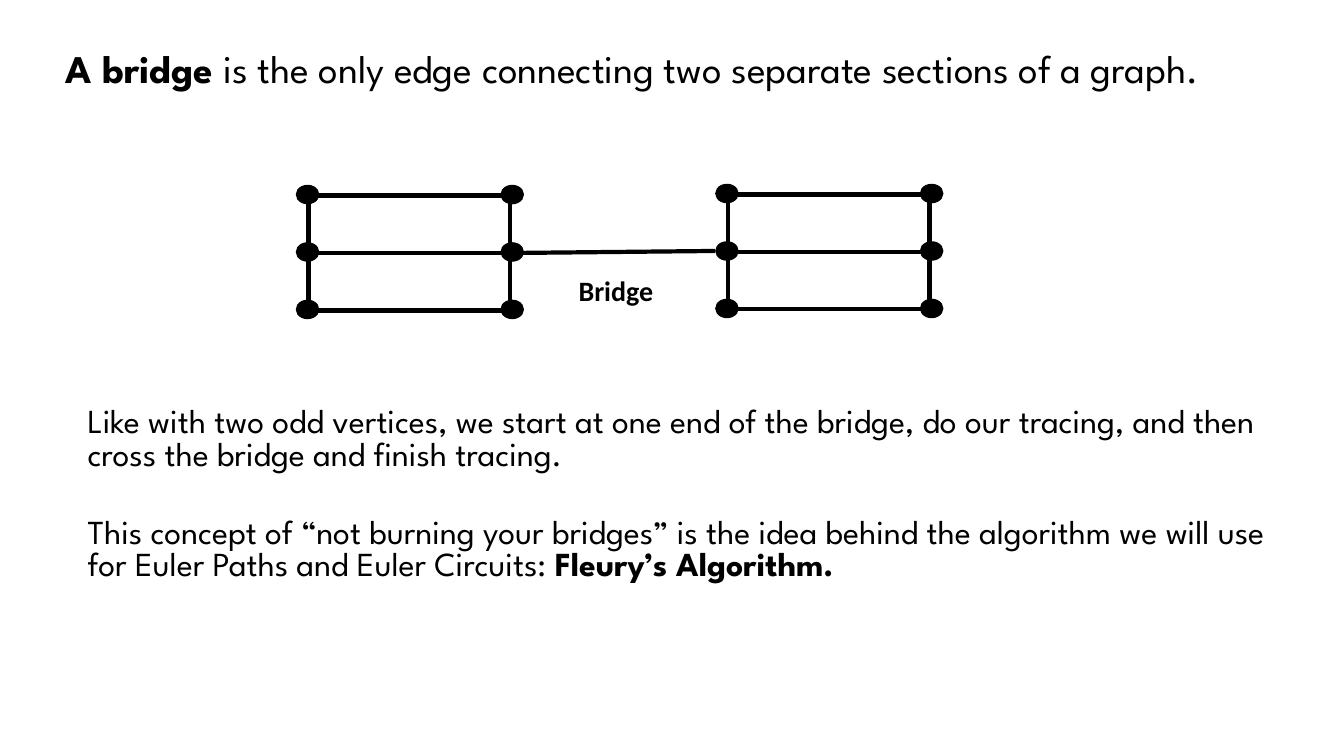
from dataclasses import dataclass
from itertools import product

from lxml.etree import SubElement
from pptx import Presentation
from pptx.dml.color import RGBColor
from pptx.enum.shapes import MSO_CONNECTOR, MSO_SHAPE
from pptx.enum.text import MSO_ANCHOR, MSO_AUTO_SIZE, PP_ALIGN
from pptx.oxml.ns import qn
from pptx.shapes.base import BaseShape
from pptx.slide import Slide
from pptx.util import Inches, Pt


@dataclass(frozen=True)
class Theme:
    ink: RGBColor = RGBColor(0, 0, 0)
    paper: RGBColor = RGBColor(255, 255, 255)
    text_font: str = "League Spartan"
    label_font: str = "Calibri"
    title_size: int = 28
    text_size: int = 24
    label_size: int = 20
    edge_width: float = 3
    vertex_width: float = 1


@dataclass(frozen=True)
class Span:
    text: str
    bold: bool = False


@dataclass(frozen=True)
class Paragraph:
    spans: tuple[Span, ...]
    space_before: float = 0
    line_spacing: float = 1.0


@dataclass(frozen=True)
class Box:
    left: float
    top: float
    width: float
    height: float


@dataclass(frozen=True)
class Section:
    """One side of the graph: a rectangle halved by a horizontal edge."""
    left: float
    top: float


THEME = Theme()
SECTION_WIDTH, ROW_HEIGHT = 2.0, 0.57
VERTEX_WIDTH, VERTEX_HEIGHT = 0.22, 0.18
COLUMN_OFFSETS = (-0.12, 1.91)
VERTEX_RISE = 0.1

SECTIONS = (Section(7.22, 1.93), Section(3.06, 1.94))
BRIDGE_START, BRIDGE_END = (5.08, 2.51), (7.09, 2.49)

TITLE_BOX = Box(0.55, 0.48, 12.25, 1)
LABEL_BOX = Box(5.64, 2.66, 1.24, 0.44)
TEXT_BOX = Box(0.77, 4, 12.2, 2.6)

TITLE = (
    Paragraph((
        Span("A bridge ", True),
        Span("is the only edge connecting two separate sections of a graph."),
    ), 10, 0.8),
)
LABEL = (Paragraph((Span("Bridge", True),)),)
EXPLANATION = (
    Paragraph((
        Span("Like with two odd vertices, we start at one end of the bridge, "
             "do our tracing, and then cross the bridge and finish tracing."),
    ), 5, 0.8),
    Paragraph((
        Span("This concept of “not burning your bridges” is the idea behind the "
             "algorithm we will use for Euler Paths and Euler Circuits: "),
        Span("Fleury’s Algorithm.", True),
    ), 33, 0.8),
)


def set_all(target: object, values: dict[str, object]) -> None:
    for name, value in values.items():
        setattr(target, name, value)


def place(shape: BaseShape, box: Box) -> None:
    set_all(shape, {
        "left": Inches(box.left), "top": Inches(box.top),
        "width": Inches(box.width), "height": Inches(box.height),
    })


def write(shape: BaseShape, paragraphs: tuple[Paragraph, ...], font: str, size: int) -> None:
    frame = shape.text_frame
    set_all(frame, {
        "word_wrap": True, "auto_size": MSO_AUTO_SIZE.NONE,
        "vertical_anchor": MSO_ANCHOR.TOP,
    })
    for index, content in enumerate(paragraphs):
        para = frame.add_paragraph() if index else frame.paragraphs[0]
        set_all(para, {
            "alignment": PP_ALIGN.LEFT, "line_spacing": content.line_spacing,
            "space_before": Pt(content.space_before),
        })
        for span in content.spans:
            run = para.add_run()
            run.text = span.text
            set_all(run.font, {"name": font, "size": Pt(size), "bold": span.bold})
            run.font.color.rgb = THEME.ink


def add_text(slide: Slide, box: Box, paragraphs: tuple[Paragraph, ...],
             font: str, size: int) -> None:
    shape = slide.shapes.add_textbox(0, 0, 0, 0)
    place(shape, box)
    write(shape, paragraphs, font, size)


def draw_edge(slide: Slide, start: tuple[float, float], end: tuple[float, float]) -> None:
    edge = slide.shapes.add_connector(
        MSO_CONNECTOR.STRAIGHT, *(Inches(value) for value in (*start, *end)))
    edge.line.color.rgb = THEME.ink
    edge.line.width = Pt(THEME.edge_width)
    SubElement(edge._element.spPr, qn("a:effectLst"))


def draw_outlined(slide: Slide, kind: MSO_SHAPE, box: Box, line_width: float) -> BaseShape:
    shape = slide.shapes.add_shape(kind, 0, 0, 0, 0)
    place(shape, box)
    shape.shadow.inherit = False
    shape.fill.background()
    shape.line.color.rgb = THEME.ink
    shape.line.width = Pt(line_width)
    return shape


def draw_section(slide: Slide, section: Section) -> None:
    outline = Box(section.left, section.top, SECTION_WIDTH, 2 * ROW_HEIGHT)
    draw_outlined(slide, MSO_SHAPE.RECTANGLE, outline, THEME.edge_width)
    middle = section.top + ROW_HEIGHT
    draw_edge(slide, (section.left, middle), (section.left + SECTION_WIDTH, middle))
    for offset, row in product(COLUMN_OFFSETS, range(3)):
        box = Box(section.left + offset, section.top - VERTEX_RISE + row * ROW_HEIGHT,
                  VERTEX_WIDTH, VERTEX_HEIGHT)
        vertex = draw_outlined(slide, MSO_SHAPE.OVAL, box, THEME.vertex_width)
        vertex.fill.solid()
        vertex.fill.fore_color.rgb = THEME.ink


def main() -> None:
    deck = Presentation()
    set_all(deck, {"slide_width": Inches(13.33), "slide_height": Inches(7.5)})
    slide = deck.slides.add_slide(deck.slide_layouts.get_by_name("Title Only"))
    slide.background.fill.solid()
    slide.background.fill.fore_color.rgb = THEME.paper

    place(slide.shapes.title, TITLE_BOX)
    write(slide.shapes.title, TITLE, THEME.text_font, THEME.title_size)
    for section in SECTIONS:
        draw_section(slide, section)
    draw_edge(slide, BRIDGE_START, BRIDGE_END)
    add_text(slide, LABEL_BOX, LABEL, THEME.label_font, THEME.label_size)
    add_text(slide, TEXT_BOX, EXPLANATION, THEME.text_font, THEME.text_size)
    deck.save("out.pptx")


if __name__ == "__main__":
    main()
